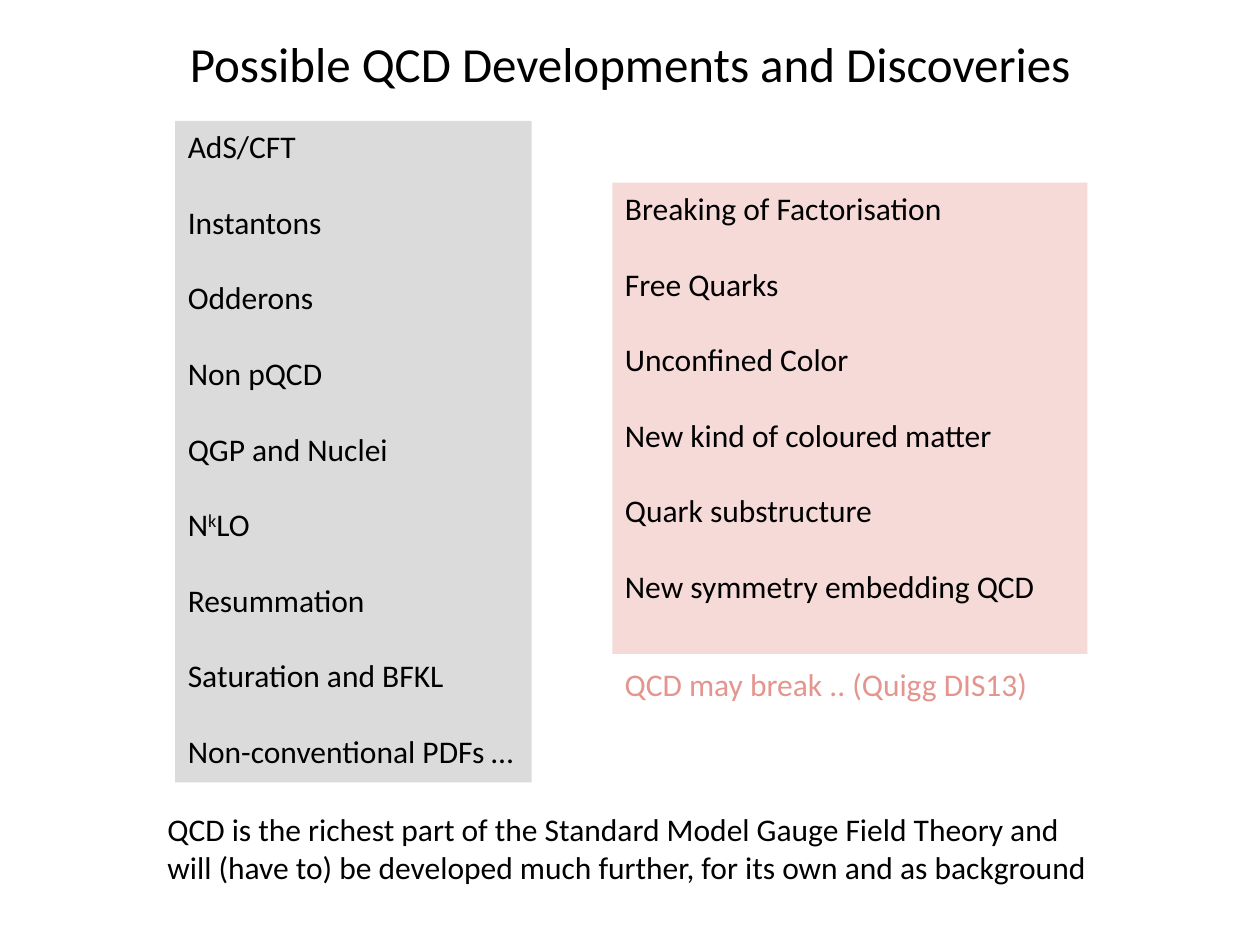
"""Build a slide listing possible QCD developments and discoveries."""
import pptx
import pptx.dml.color
import pptx.enum.text
import pptx.oxml
import pptx.oxml.ns
import pptx.util
from dataclasses import dataclass

Inches = pptx.util.Inches
Pt = pptx.util.Pt
RGB = pptx.dml.color.RGBColor.from_string
qn = pptx.oxml.ns.qn


@dataclass
class Theme:
    font: str = "Calibri"
    ink: str = "000000"
    rose: str = "E3958E"
    head: int = 28
    text: int = 18
    gap: float = 21.6


theme = Theme()


def place(box, left, top, width, height):
    box.left, box.top = Inches(left), Inches(top)
    box.width, box.height = Inches(width), Inches(height)


def write(box, lines, size=theme.text, color=theme.ink, gap=0):
    frame = box.text_frame
    frame.word_wrap = True
    frame.auto_size = pptx.enum.text.MSO_AUTO_SIZE.NONE
    for i, line in enumerate(lines):
        para = frame.add_paragraph() if i else frame.paragraphs[0]
        para.space_before = Pt(0)
        para.space_after = Pt(gap if i < len(lines) - 1 else 0)
        for part in line.split("^"):
            run = para.add_run()
            run.text = part
            run.font.name = theme.font
            run.font.size = Pt(size)
            run.font.color.rgb = RGB(color)
        if len(para.runs) == 3:
            para.runs[1].font._element.set("baseline", "30000")


deck = pptx.Presentation()
deck.slide_width, deck.slide_height = Inches(10), Inches(7.5)
slide = deck.slides.add_slide(deck.slide_layouts[3])

title = slide.shapes.title
place(title, 0.5, 0.07, 9, 0.86)
write(title, ["Possible QCD Developments and Discoveries"], theme.head)
title.text_frame.vertical_anchor = pptx.enum.text.MSO_ANCHOR.MIDDLE
title.text_frame.paragraphs[0].alignment = pptx.enum.text.PP_ALIGN.CENTER

lists = [
    (1, (1.39, 0.96, 2.83, 5.25), theme.ink, 14, [
        "AdS/CFT", "Instantons", "Odderons", "Non pQCD", "QGP and Nuclei",
        "N^k^LO", "Resummation", "Saturation and BFKL",
        "Non-conventional PDFs …"]),
    (2, (4.86, 1.45, 3.77, 3.74), theme.rose, 34, [
        "Breaking of Factorisation", "Free Quarks", "Unconfined Color",
        "New kind of coloured matter", "Quark substructure",
        "New symmetry embedding QCD"]),
]
for idx, spot, fill, alpha, items in lists:
    body = slide.placeholders[idx]
    place(body, *spot)
    body.fill.solid()
    body.fill.fore_color.rgb = RGB(fill)
    tint = body._element.spPr.find(".//" + qn("a:srgbClr"))
    tint.append(pptx.oxml.parse_xml(
        f'<a:alpha {pptx.oxml.ns.nsdecls("a")} val="{alpha * 1000}"/>'))
    write(body, items, gap=theme.gap)
    for para in body.text_frame.paragraphs:
        props = para._p.get_or_add_pPr()
        props.set("marL", "0")
        props.set("indent", "0")
        props.append(pptx.oxml.parse_xml(
            f'<a:buNone {pptx.oxml.ns.nsdecls("a")}/>'))

notes = [
    ((1.23, 6.38, 7.61, 0.71), theme.ink, [
        "QCD is the richest part of the Standard Model Gauge Field Theory and",
        "will (have to) be developed much further, for its own and as background"]),
    ((4.86, 5.23, 3.74, 0.4), theme.rose, ["QCD may break .. (Quigg DIS13)"]),
]
for spot, color, lines in notes:
    box = slide.shapes.add_textbox(*map(Inches, spot))
    write(box, lines, color=color)

deck.save("out.pptx")
